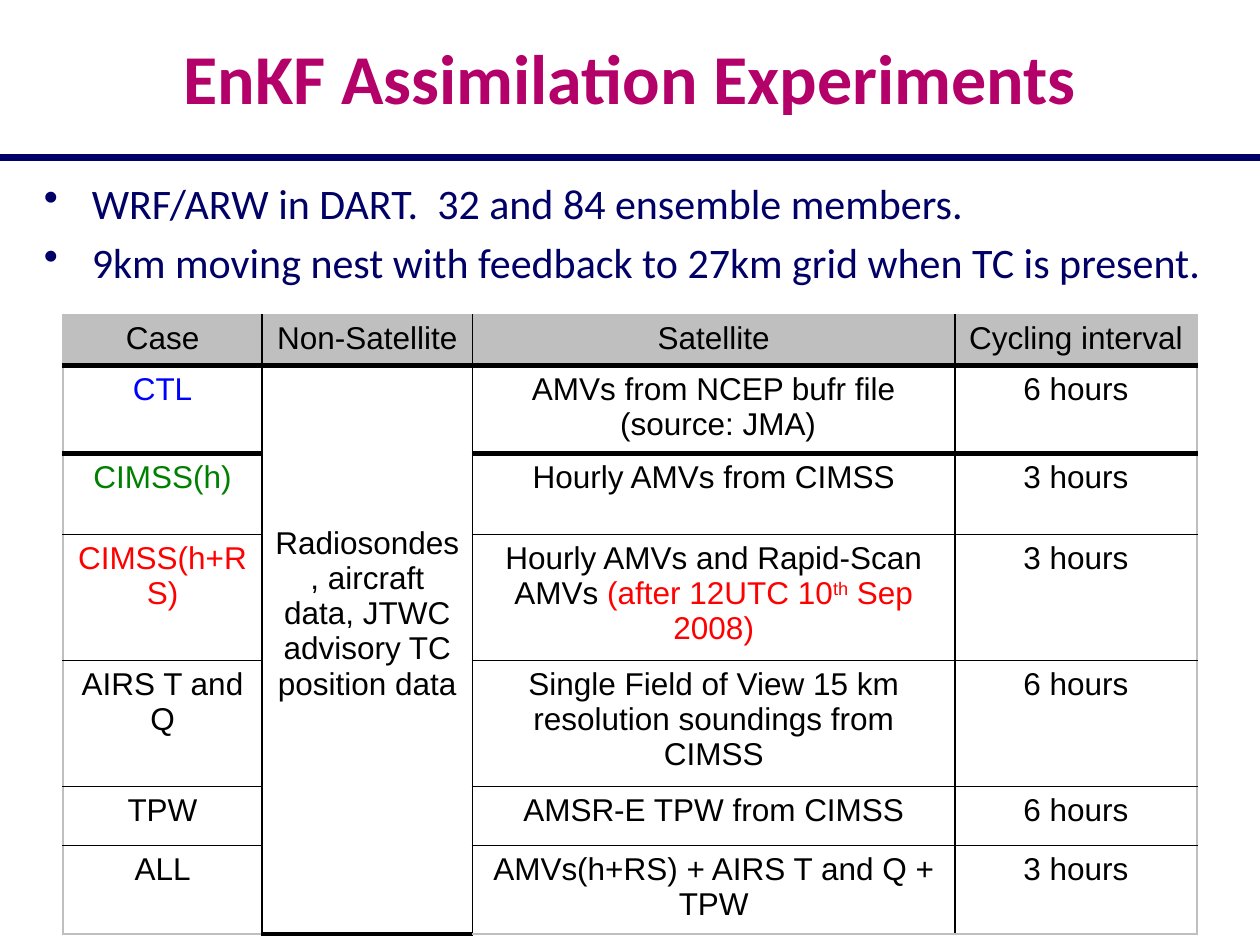
from pptx import Presentation
from pptx.dml.color import RGBColor
from pptx.enum.shapes import MSO_CONNECTOR as CONN
from pptx.enum.text import MSO_ANCHOR as ANCHOR, PP_ALIGN as ALIGN
from pptx.oxml.ns import qn
from pptx.util import Inches, Pt
from lxml.etree import SubElement

COLORS = {
    "title": "B40069", "navy": "000066", "black": "000000", "grey": "BFBFBF",
    "blue": "0000FF", "green": "008000", "red": "FF0000",
}


def rgb(name):
    return RGBColor.from_string(COLORS[name])


class SlideBuilder:
    heading_font = "Calibri"
    table_font = "Arial"

    def __init__(self, slide):
        self.slide = slide

    def style(self, p, font, size, color, align, bold=False):
        p.alignment = align
        p.font.name, p.font.size, p.font.bold = font, Pt(size), bold
        p.font.color.rgb = rgb(color)

    def textbox(self, x, y, w, h):
        box = self.slide.shapes.add_textbox(Inches(x), Inches(y), Inches(w), Inches(h))
        box.text_frame.word_wrap = True
        return box.text_frame

    def title(self, text, *box):
        tf = self.textbox(*box)
        tf.vertical_anchor = ANCHOR.MIDDLE
        p = tf.paragraphs[0]
        p.text = text
        self.style(p, self.heading_font, 40, "title", ALIGN.CENTER, bold=True)

    def bullets(self, lines, *box):
        tf = self.textbox(*box)
        for i, line in enumerate(lines):
            p = tf.add_paragraph() if i else tf.paragraphs[0]
            p.text = line
            self.style(p, self.heading_font, 24, "navy", ALIGN.JUSTIFY)
            p.space_before = Pt(4.8)
            pPr = p._p.get_or_add_pPr()
            pPr.set("marL", str(Inches(0.38)))
            pPr.set("indent", str(-Inches(0.38)))
            bullet = pPr.makeelement(qn("a:buChar"), {"char": "•"})
            pPr.insert_element_before(bullet, "a:tabLst", "a:defRPr", "a:extLst")

    def rule(self, y, width, color, weight):
        line = self.slide.shapes.add_connector(
            CONN.STRAIGHT, 0, Inches(y), Inches(width), Inches(y))
        line.line.color.rgb = rgb(color)
        line.line.width = Pt(weight)
        SubElement(line._element.spPr, qn("a:effectLst"))

    def borders(self, cell, sides):
        tcPr = cell._tc.get_or_add_tcPr()
        for i, side in enumerate("LRTB"):
            color, weight = sides[side]
            ln = tcPr.makeelement(qn("a:ln" + side), {"w": str(Pt(weight))})
            fill = SubElement(ln, qn("a:solidFill"))
            SubElement(fill, qn("a:srgbClr"), val=COLORS[color])
            tcPr.insert(i, ln)

    def cell_text(self, cell, paragraphs, color):
        """Each paragraph is a list of (text, color, superscript) runs or a string."""
        tf = cell.text_frame
        for i, runs in enumerate(paragraphs):
            p = tf.add_paragraph() if i else tf.paragraphs[0]
            self.style(p, self.table_font, 18, color, ALIGN.CENTER)
            if isinstance(runs, str):
                runs = [(runs, color, False)]
            for text, run_color, raised in runs:
                r = p.add_run()
                r.text = text
                r.font.color.rgb = rgb(run_color)
                if raised:
                    r._r.get_or_add_rPr().set("baseline", "30000")

    def table(self, x, y, widths, heights):
        frame = self.slide.shapes.add_table(
            len(heights), len(widths), Inches(x), Inches(y),
            Inches(sum(widths)), Inches(sum(heights)))
        table = frame.table
        table.first_row = table.horz_banding = False
        for column, width in zip(table.columns, widths):
            column.width = Inches(width)
        for row, height in zip(table.rows, heights):
            row.height = Inches(height)
        return table


HEADER = ["Case", "Non-Satellite", "Satellite", "Cycling interval"]
SHARED_DATA = "Radiosondes, aircraft data, JTWC advisory TC position data"
RAPID_SCAN = [
    ("Hourly AMVs and Rapid-Scan AMVs ", "black", False),
    ("(after 12UTC 10", "red", False),
    ("th", "red", True),
    (" Sep 2008)", "red", False),
]
# Case, colour of the case, satellite paragraphs, cycling hours
CASES = [
    ("CTL", "blue", ["AMVs from NCEP bufr file", " (source: JMA)"], 6),
    ("CIMSS(h)", "green", ["Hourly AMVs from CIMSS"], 3),
    ("CIMSS(h+RS)", "red", [RAPID_SCAN], 3),
    ("AIRS T and Q", "black",
     ["Single Field of View 15 km resolution soundings from CIMSS"], 6),
    ("TPW", "black", ["AMSR-E TPW from CIMSS"], 6),
    ("ALL", "black", ["AMVs(h+RS) + AIRS T and Q + TPW"], 3),
]
WIDTHS = [1.58, 1.67, 3.83, 1.92]
HEIGHTS = [0.38, 0.66, 0.64, 0.97, 0.94, 0.47, 0.66]


def fill_experiments(builder, table):
    last_row, last_col = len(HEIGHTS) - 1, len(WIDTHS) - 1
    edge, thin, thick = ("grey", 1), ("black", 1), ("black", 3)

    # Fills and borders: grey outside, heavy lines under the first two rows
    for row in range(last_row + 1):
        for col in range(last_col + 1):
            cell = table.cell(row, col)
            if row == 0:
                cell.fill.solid()
                cell.fill.fore_color.rgb = rgb("grey")
            else:
                cell.fill.background()
            builder.borders(cell, {
                "L": edge if col == 0 else thin,
                "R": edge if col == last_col else thin,
                "T": edge if row == 0 else thick if row <= 2 else thin,
                "B": edge if row == last_row else thick if row <= 1 else thin,
            })

    # Wording
    for col, text in enumerate(HEADER):
        builder.cell_text(table.cell(0, col), [text], "black")
    for row, (case, color, satellite, hours) in enumerate(CASES, start=1):
        builder.cell_text(table.cell(row, 0), [case], color)
        builder.cell_text(table.cell(row, 2), satellite, "black")
        builder.cell_text(table.cell(row, 3), [f"{hours} hours"], "black")

    # One non-satellite data set shared by all cases
    shared = table.cell(1, 1)
    shared.merge(table.cell(last_row, 1))
    shared.margin_top = Inches(1.27)
    builder.cell_text(shared, [SHARED_DATA], "black")


def main():
    prs = Presentation()
    prs.slide_width, prs.slide_height = Inches(10), Inches(7.5)
    builder = SlideBuilder(prs.slides.add_slide(prs.slide_layouts[6]))

    # Heading
    builder.title("EnKF Assimilation Experiments", 0, 0.14, 10, 0.94)
    builder.rule(1.25, 10, "navy", 3.5)

    # Model setup
    builder.bullets([
        "WRF/ARW in DART.  32 and 84 ensemble members.",
        "9km moving nest with feedback to 27km grid when TC is present.",
    ], 0.25, 1.36, 9.58, 1.06)

    # Experiments
    fill_experiments(builder, builder.table(0.5, 2.5, WIDTHS, HEIGHTS))
    prs.save("out.pptx")


if __name__ == "__main__":
    main()
